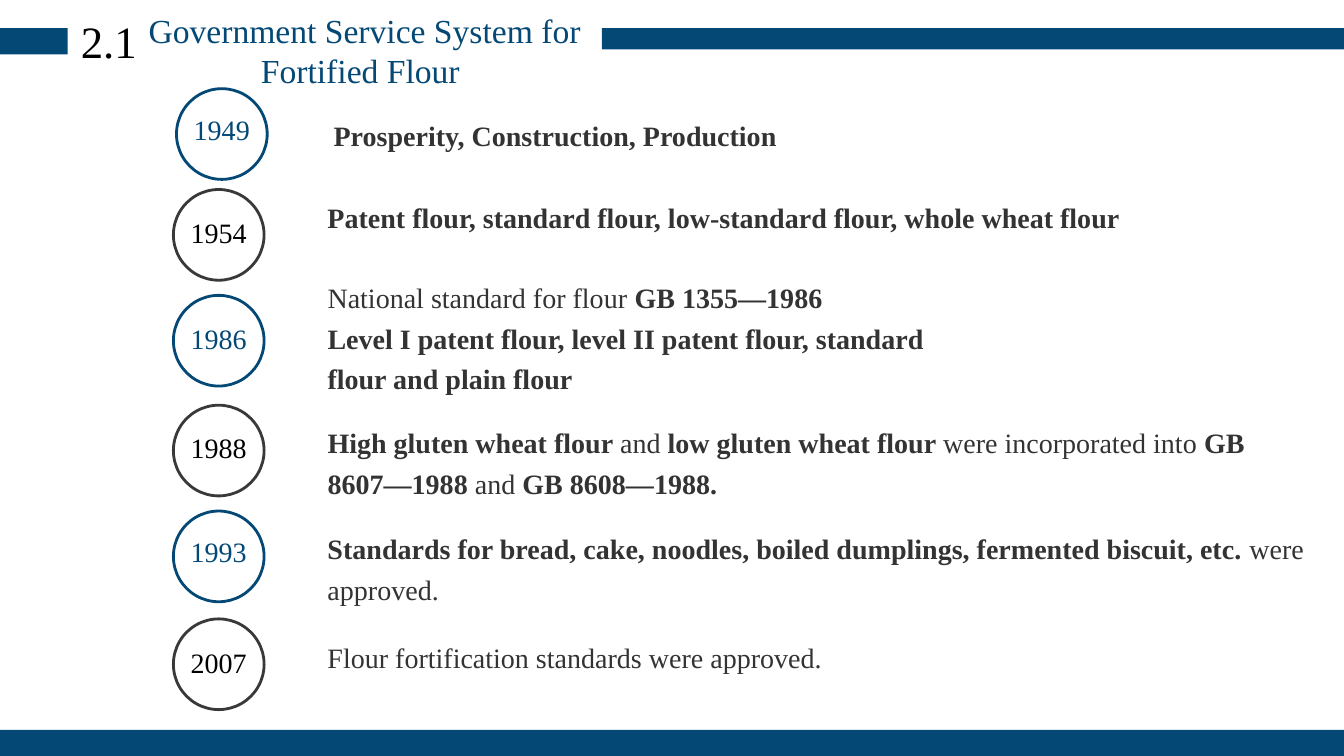
import pptx
import pptx.dml.color
import pptx.enum.shapes
import pptx.enum.text
import pptx.util
from dataclasses import dataclass
from typing import NamedTuple

COLORS = {"navy": "044875", "charcoal": "3B3838", "body": "333333", "black": "000000"}
FONT = "Times New Roman"
CENTER = pptx.enum.text.PP_ALIGN.CENTER
LEFT = pptx.enum.text.PP_ALIGN.LEFT
FRAME_FORMAT = {
    "word_wrap": True,
    "auto_size": pptx.enum.text.MSO_AUTO_SIZE.SHAPE_TO_FIT_TEXT,
    "vertical_anchor": pptx.enum.text.MSO_ANCHOR.TOP,
}

deck = pptx.Presentation()
deck.slide_width = pptx.util.Inches(13.33)
deck.slide_height = pptx.util.Inches(7.5)
slide = deck.slides.add_slide(deck.slide_layouts[6])


class Area(NamedTuple):
    """Shares of the slide's width and height, in percent."""
    left: float
    top: float
    width: float
    height: float


class Phrase(NamedTuple):
    text: str
    bold: bool = False


@dataclass
class Milestone:
    year: str
    circle_top: float
    year_top: float
    account: Area
    paragraphs: list[list[Phrase]]
    spacing: float = 1.2
    circle_left: float = 12.9


def place(area: Area) -> list[int]:
    across, down = deck.slide_width / 100, deck.slide_height / 100
    return [round(share * unit) for share, unit in zip(area, (across, down, across, down))]


def rgb(name: str) -> pptx.dml.color.RGBColor:
    return pptx.dml.color.RGBColor.from_string(COLORS[name])


def apply(target: object, values: dict) -> None:
    for attribute, value in values.items():
        setattr(target, attribute, value)


def draw_bar(area: Area) -> None:
    bar = slide.shapes.add_shape(pptx.enum.shapes.MSO_SHAPE.RECTANGLE, *place(area))
    bar.shadow.inherit = False
    bar.fill.solid()
    bar.fill.fore_color.rgb = rgb("navy")
    bar.line.fill.background()


def draw_circle(area: Area, color: str) -> None:
    circle = slide.shapes.add_shape(pptx.enum.shapes.MSO_SHAPE.OVAL, *place(area))
    circle.shadow.inherit = False
    circle.fill.background()
    circle.line.color.rgb = rgb(color)
    circle.line.width = pptx.util.Pt(2)


def write(area: Area, paragraphs: list[list[Phrase]], size: int, color: str,
          align: pptx.enum.text.PP_ALIGN = CENTER, spacing: float = 1.0) -> None:
    frame = slide.shapes.add_textbox(*place(area)).text_frame
    apply(frame, FRAME_FORMAT)
    for index, phrases in enumerate(paragraphs):
        paragraph = frame.add_paragraph() if index else frame.paragraphs[0]
        apply(paragraph, {"alignment": align, "line_spacing": spacing})
        for phrase in phrases:
            run = paragraph.add_run()
            run.text = phrase.text
            apply(run.font, {"name": FONT, "size": pptx.util.Pt(size), "bold": phrase.bold})
            run.font.color.rgb = rgb(color)


def draw_milestone(milestone: Milestone, year_color: str, ring_color: str) -> None:
    year_area = Area(milestone.circle_left - 2.78, milestone.year_top, 12.3, 5.87)
    write(year_area, [[Phrase(milestone.year)]], 20, year_color)
    draw_circle(Area(milestone.circle_left, milestone.circle_top, 6.75, 12), ring_color)
    write(milestone.account, milestone.paragraphs, 20, "body", LEFT, milestone.spacing)


MILESTONES = [
    Milestone("1949", 11.73, 14.27, Area(24.08, 15.07, 36.46, 5.87),
              [[Phrase("Prosperity, Construction, Production", True)]], 1.0, 13.13),
    Milestone("1954", 25.07, 27.87, Area(23.63, 25.87, 61.74, 5.87),
              [[Phrase("Patent flour, standard flour, low-standard flour, whole wheat flour", True)]], 1.0),
    Milestone("1986", 39.07, 41.87, Area(23.63, 35.6, 47.79, 17.47),
              [[Phrase("National standard for flour "), Phrase("GB 1355—1986", True)],
               [Phrase("Level I patent flour, level II patent flour, standard flour and plain flour", True)]]),
    Milestone("1988", 53.6, 56.27, Area(23.63, 54.8, 71.27, 11.6),
              [[Phrase("High gluten wheat flour ", True), Phrase("and "),
                Phrase("low gluten wheat flour ", True), Phrase("were incorporated into "),
                Phrase("GB 8607—1988 ", True), Phrase("and "), Phrase("GB 8608—1988.", True)]]),
    Milestone("1993", 67.6, 70, Area(23.63, 68.8, 76.37, 11.6),
              [[Phrase("Standards for bread, cake, noodles, boiled dumplings, fermented biscuit, etc. ", True),
                Phrase("were approved.")]]),
    Milestone("2007", 81.87, 84.67, Area(23.63, 83.2, 76.37, 6.27),
              [[Phrase("Flour fortification standards were approved.")]]),
]
RINGS = [("navy", "navy"), ("black", "charcoal")]

for band in (Area(0, 3.73, 5.03, 3.47), Area(44.79, 3.73, 55.21, 2.8), Area(0, 96.53, 100, 3.47)):
    draw_bar(band)
write(Area(6.68, 0.67, 40.89, 12.13),
      [[Phrase("Government Service System for Fortified Flour ")]], 24, "navy")
write(Area(3.6, 1.2, 9, 8.53), [[Phrase("2.1")]], 32, "black")
for order, milestone in enumerate(MILESTONES):
    draw_milestone(milestone, *RINGS[order % 2])

deck.save("out.pptx")
